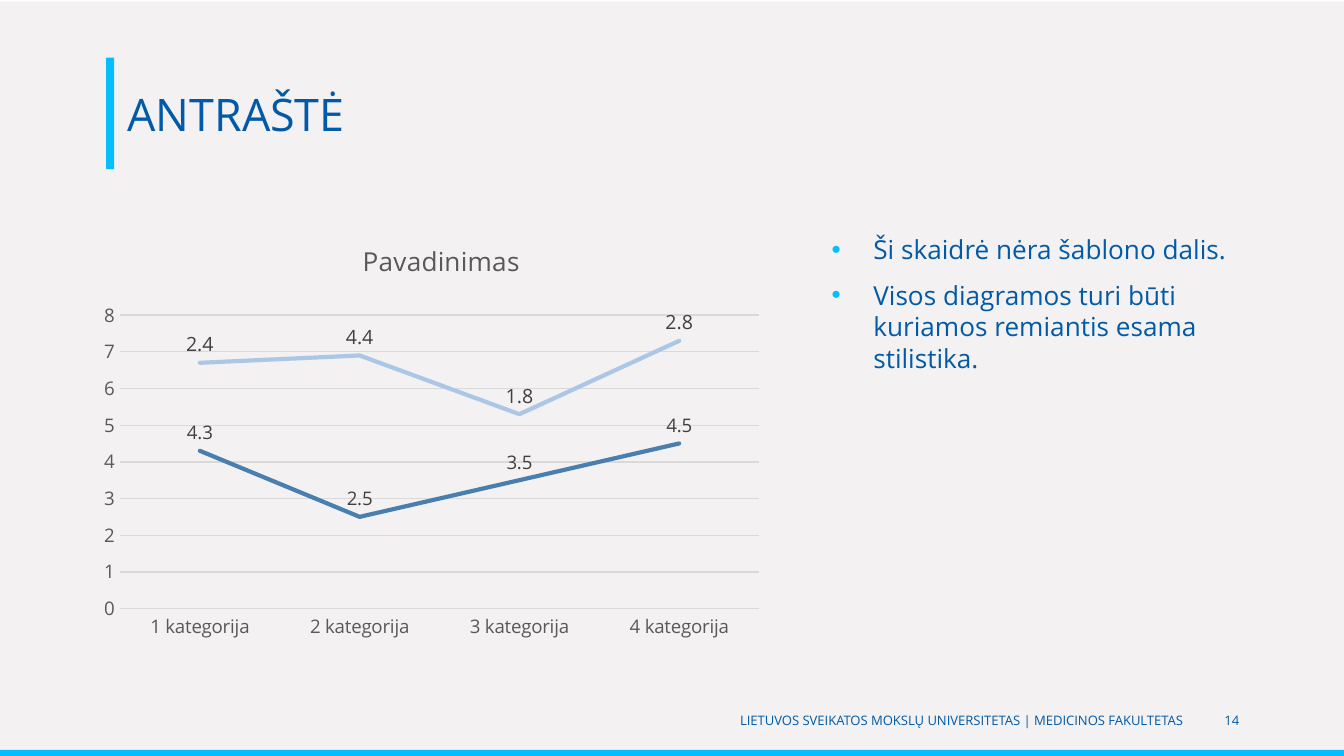
"""Builds a slide with a stacked line chart and two bullet points."""
from lxml.etree import Element, SubElement
from pptx import Presentation
from pptx.chart.data import CategoryChartData
from pptx.dml.color import RGBColor
from pptx.enum.chart import XL_CHART_TYPE, XL_LABEL_POSITION, XL_TICK_MARK
from pptx.enum.shapes import MSO_SHAPE
from pptx.enum.text import MSO_ANCHOR, PP_ALIGN
from pptx.oxml.ns import qn
from pptx.util import Inches, Pt

PAPER = RGBColor(0xF3, 0xF1, 0xF2)
CYAN = RGBColor(0x06, 0xBD, 0xFF)
NAVY = RGBColor(0x01, 0x5A, 0xA7)
STEEL = RGBColor(0x49, 0x7F, 0xAF)
PALE = RGBColor(0xAC, 0xC6, 0xE6)
GRID = RGBColor(0xD9, 0xD9, 0xD9)
GRAY = RGBColor(0x59, 0x59, 0x59)
DARK = RGBColor(0x40, 0x40, 0x40)
FACE = "Open Sans"


def style(font, size, color):
    font.name = FACE
    font.size = Pt(size)
    font.bold = False
    font.color.rgb = color


def add_text(box, lines, size, align=PP_ALIGN.LEFT, anchor=MSO_ANCHOR.MIDDLE, bullet=False):
    frame = slide.shapes.add_textbox(*map(Inches, box)).text_frame
    frame.word_wrap = True
    frame.vertical_anchor = anchor
    for i, line in enumerate(lines):
        para = frame.paragraphs[0] if i == 0 else frame.add_paragraph()
        para.text = line
        para.alignment = align
        if i:
            para.space_before = Pt(7.5)
        if bullet:
            props = para._p.get_or_add_pPr()
            props.set("marL", str(Inches(0.31)))
            props.set("indent", str(Inches(-0.31)))
            tint = SubElement(props, qn("a:buClr"))
            SubElement(tint, qn("a:srgbClr")).set("val", str(CYAN))
            SubElement(props, qn("a:buFont")).set("typeface", "Arial")
            SubElement(props, qn("a:buChar")).set("char", "•")
        style(para.font, size, NAVY)


deck = Presentation()
deck.slide_width = Inches(10)
deck.slide_height = Inches(10) * 9 // 16
slide = deck.slides.add_slide(deck.slide_layouts[6])

bars = [
    ((0, 0.01, 10, 5.62), PAPER),
    ((0, 5.58, 10, 0.05), CYAN),
    ((0.79, 0.43, 0.06, 0.83), CYAN),
]
for box, color in bars:
    bar = slide.shapes.add_shape(MSO_SHAPE.RECTANGLE, *map(Inches, box))
    bar.shadow.inherit = False
    bar.fill.solid()
    bar.fill.fore_color.rgb = color
    bar.line.fill.background()

add_text((0.85, 0.43, 8.46, 0.83), ["ANTRAŠTĖ"], 24)
points = [
    "Ši skaidrė nėra šablono dalis.",
    "Visos diagramos turi būti kuriamos remiantis esama stilistika.",
]
add_text((6.09, 1.69, 3.23, 3.12), points, 14, anchor=MSO_ANCHOR.TOP, bullet=True)

data = CategoryChartData()
data.categories = [f"{n} kategorija" for n in range(1, 5)]
data.add_series("Series 1", (4.3, 2.5, 3.5, 4.5))
data.add_series("Series 2", (2.4, 4.4, 1.8, 2.8))
place = map(Inches, (0.69, 1.69, 5.06, 3.12))
chart = slide.shapes.add_chart(XL_CHART_TYPE.LINE_STACKED, *place, data).chart
style(chart.font, 10, GRAY)
chart.has_legend = False
chart.has_title = True
title = chart.chart_title.text_frame
title.text = "Pavadinimas"
style(title.paragraphs[0].font, 14, GRAY)

head = chart._chartSpace.chart.find(qn("c:title"))
area = chart._chartSpace.chart.plotArea
spots = [
    (head, 1, {"xMode": "edge", "yMode": "edge", "x": 0.39, "y": 0.02}),
    (area, 0, {"layoutTarget": "inner", "xMode": "edge", "yMode": "edge",
               "x": 0.04, "y": 0.21, "w": 0.94, "h": 0.7}),
]
for part, index, rules in spots:
    for old in part.findall(qn("c:layout")):
        part.remove(old)
    layout = Element(qn("c:layout"))
    manual = SubElement(layout, qn("c:manualLayout"))
    for name, value in rules.items():
        SubElement(manual, qn(f"c:{name}")).set("val", str(value))
    part.insert(index, layout)

for axis in (chart.category_axis, chart.value_axis):
    axis.major_tick_mark = axis.minor_tick_mark = XL_TICK_MARK.NONE
    style(axis.tick_labels.font, 10, GRAY)
base = chart.category_axis.format.line
rule = chart.value_axis.major_gridlines.format.line
for line in (base, rule):
    line.color.rgb = GRID
    line.width = Pt(0.75)
chart.value_axis.format.line.fill.background()

plot = chart.plots[0]
plot.vary_by_categories = False
for series, color, size in zip(plot.series, (STEEL, PALE), (10, 10.5)):
    series.smooth = False
    line = series.format.line
    line.color.rgb = color
    line.width = Pt(2.25)
    line._get_or_add_ln().set("cap", "rnd")
    labels = series.data_labels
    labels.show_value = True
    labels.position = XL_LABEL_POSITION.ABOVE
    style(labels.font, size, DARK)

footer = "LIETUVOS SVEIKATOS MOKSLŲ UNIVERSITETAS | MEDICINOS FAKULTETAS"
add_text((1.68, 5.21, 7.22, 0.3), [footer], 7, PP_ALIGN.RIGHT)
add_text((8.96, 5.21, 0.36, 0.3), ["14"], 7, PP_ALIGN.RIGHT)

deck.save("out.pptx")
